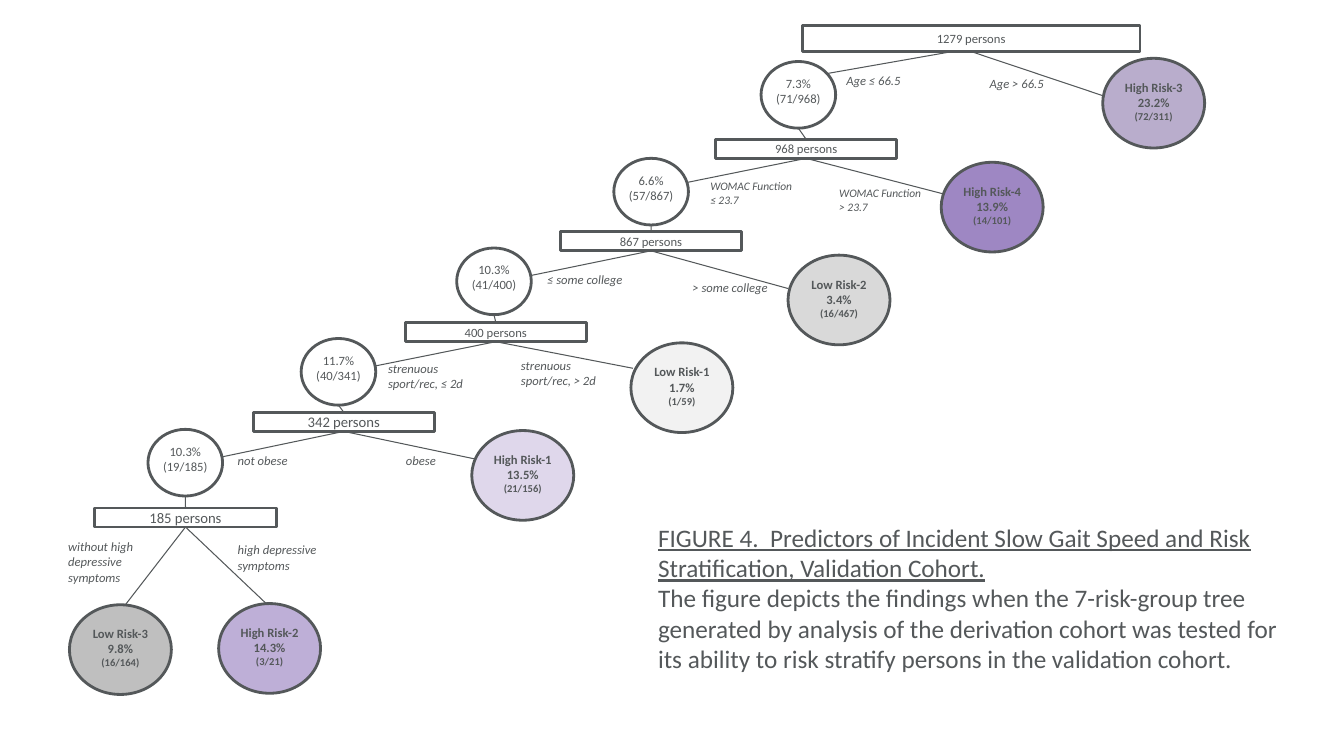
from lxml.etree import SubElement
from pptx import Presentation
from pptx.dml.color import RGBColor
from pptx.enum.shapes import MSO_CONNECTOR, MSO_SHAPE
from pptx.enum.text import MSO_ANCHOR, MSO_AUTO_SIZE, PP_ALIGN
from pptx.oxml.ns import qn
from pptx.util import Cm, Pt

INK = "54585A"
FONT = "Calibri"

CAPTION = [
    ("FIGURE 4.  Predictors of Incident Slow Gait Speed and Risk "
     "Stratification, Validation Cohort.", True),
    ("The figure depicts the findings when the 7-risk-group tree generated by "
     "analysis of the derivation cohort was tested for its ability to risk "
     "stratify persons in the validation cohort.", False),
]

# text, size, left, top, width, height (cm)
SPLITS = [
    ("1279 persons", 9, 20.22, 0.64, 8.51, 0.66),
    ("968 persons", 9, 18.03, 3.51, 4.57, 0.48),
    ("867 persons", 9, 14.12, 5.84, 4.57, 0.48),
    ("400 persons", 9, 10.21, 8.13, 4.57, 0.48),
    ("342 persons", 10.5, 6.38, 10.39, 4.57, 0.48),
    ("185 persons", 10.5, 2.39, 12.8, 4.57, 0.48),
]

# Circles that are split again, one under each split but the last:
# lines, left, top, line end within the circle (cm)
SUBGROUPS = [
    (["7.3%", "(71/968)"], 19.18, 1.55, (1.68, 0.3)),
    (["6.6%", "(57/867)"], 15.47, 3.99, (1.83, 0.61)),
    (["10.3%", "(41/400)"], 11.51, 6.25, (1.88, 0.69)),
    (["11.7%", "(40/341)"], 7.59, 8.53, (1.88, 0.69)),
    (["10.3%", "(19/185)"], 3.73, 10.82, (1.88, 0.69)),
]

# Final risk groups: parent split, lines, fill, left, top, line end (cm)
RISK_GROUPS = [
    (0, ["High Risk-3", "23.2%", "(72/311)"], "B9ADCC", 27.79, 1.47, (0, 0.94)),
    (1, ["High Risk-4", "13.9%", "(14/101)"], "9E87C3", 23.72, 4.09, (0.03, 0.79)),
    (2, ["Low Risk-2", "3.4%", "(16/467)"], "D9D9D9", 19.86, 6.43, (0, 0.84)),
    (3, ["Low Risk-1", "1.7%", "(1/59)"], "F2F2F2", 15.9, 8.64, (0.05, 0.64)),
    (4, ["High Risk-1", "13.5%", "(21/156)"], "DFD7EB", 11.89, 10.85, (0.05, 0.71)),
    (5, ["High Risk-2", "14.3%", "(3/21)"], "BEAFD7", 5.51, 15.21, (1.2, 0)),
    (5, ["Low Risk-3", "9.8%", "(16/164)"], "BFBFBF", 1.75, 15.24, (1.37, 0.05)),
]

# lines, size, left, top, width (cm)
BRANCH_LABELS = [
    (["Age ≤ 66.5"], 9, 21.08, 1.7, 2.69),
    (["Age > 66.5"], 9, 24.69, 1.78, 2.29),
    (["WOMAC Function", "≤ 23.7"], 8.2, 17.65, 4.39, 3.05),
    (["WOMAC Function", "> 23.7"], 8.2, 20.9, 4.57, 3.05),
    (["≤ some college"], 9, 13.54, 6.73, 2.95),
    (["> some college"], 9, 17.2, 6.93, 2.82),
    (["strenuous sport/rec, ≤ 2d"], 9, 9.53, 8.97, 2.95),
    (["strenuous sport/rec, > 2d"], 9, 12.88, 8.89, 3.07),
    (["not obese"], 9, 5.74, 11.28, 2.24),
    (["obese"], 9, 9.98, 11.28, 2.26),
    (["high depressive symptoms"], 9, 5.74, 13.54, 3.51),
    (["without high", "depressive symptoms"], 9, 1.47, 13.46, 2.84),
]

SUBGROUP_SIZE = (1.88, 1.68)
RISK_SIZE = (2.57, 2.26)
ROOT_LEFT_SHIFT = 0.48  # the root's left branch starts left of centre


def rgb(color):
    return RGBColor.from_string(color)


def write(tf, lines, sizes, align=PP_ALIGN.LEFT, **style):
    for i, (line, size) in enumerate(zip(lines, sizes)):
        p = tf.paragraphs[0] if i == 0 else tf.add_paragraph()
        p.alignment = align
        r = p.add_run()
        r.text = line
        r.font.name, r.font.size = FONT, Pt(size)
        r.font.color.rgb = rgb(INK)
        for name, value in style.items():
            setattr(r.font, name, value)


def add_node(kind, left, top, width, height, lines, sizes, fill=None, lift=0, bold=False):
    """Add an outlined shape whose centred text is raised by half of lift."""
    sp = slide.shapes.add_shape(kind, Cm(left), Cm(top), Cm(width), Cm(height))
    sp.shadow.inherit = False
    if fill:
        sp.fill.solid()
        sp.fill.fore_color.rgb = rgb(fill)
    else:
        sp.fill.background()
    sp.line.color.rgb = rgb(INK)
    sp.line.width = Pt(2)
    tf = sp.text_frame
    tf.word_wrap = False
    tf.vertical_anchor = MSO_ANCHOR.MIDDLE
    tf.margin_left = tf.margin_right = tf.margin_top = 0
    tf.margin_bottom = Cm(lift)
    write(tf, lines, sizes, PP_ALIGN.CENTER, bold=bold)
    return sp


def add_line(x1, y1, x2, y2):
    line = slide.shapes.add_connector(
        MSO_CONNECTOR.STRAIGHT, Cm(x1), Cm(y1), Cm(x2), Cm(y2))
    line.line.color.rgb = rgb(INK)
    line.line.width = Pt(0.75)
    SubElement(line._element.spPr, qn("a:effectLst"))
    return line


def add_branch(split, left, top, hook, shift=0):
    """Draw a line from under a split box to the hook point of a circle."""
    _, _, x, y, w, h = SPLITS[split]
    line = add_line(x + w / 2 - shift, y + h, left + hook[0], top + hook[1])
    if not shift:
        line.begin_connect(boxes[split], 2)


prs = Presentation()
prs.slide_width, prs.slide_height = Cm(33.87), Cm(19.05)
slide = prs.slides.add_slide(prs.slide_layouts[5])

title = slide.shapes.title
title.left, title.top, title.width, title.height = Cm(16.33), Cm(13.03), Cm(16.26), Cm(4.11)
tf = title.text_frame
tf.word_wrap = True
tf.auto_size = MSO_AUTO_SIZE.NONE
tf.vertical_anchor = MSO_ANCHOR.TOP
write(tf, [text for text, _ in CAPTION], [18, 18])
for p, (_, underlined) in zip(tf.paragraphs, CAPTION):
    p.runs[0].font.underline = underlined

boxes = [add_node(MSO_SHAPE.RECTANGLE, *place, [text], [size], "FFFFFF")
         for text, size, *place in SPLITS]

circle = MSO_SHAPE.FLOWCHART_CONNECTOR
for i, (lines, left, top, hook) in enumerate(SUBGROUPS):
    width, height = SUBGROUP_SIZE
    add_branch(i, left, top, hook, 0 if i else ROOT_LEFT_SHIFT)
    _, _, x, y, w, _ = SPLITS[i + 1]
    stem = add_line(left + width / 2, top + height, x + w / 2, y)
    stem.end_connect(boxes[i + 1], 0)
    add_node(circle, left, top, width, height, lines, [9, 9], lift=0.2)

for split, lines, fill, left, top, hook in RISK_GROUPS:
    add_branch(split, left, top, hook)
    add_node(circle, left, top, *RISK_SIZE, lines, [9, 9, 7.5], fill, lift=0.1, bold=True)

for lines, size, left, top, width in BRANCH_LABELS:
    box = slide.shapes.add_textbox(Cm(left), Cm(top), Cm(width), Cm(0.76))
    box.text_frame.word_wrap = True
    box.text_frame.auto_size = MSO_AUTO_SIZE.SHAPE_TO_FIT_TEXT
    write(box.text_frame, lines, [size] * len(lines), italic=True)

prs.save("out.pptx")
